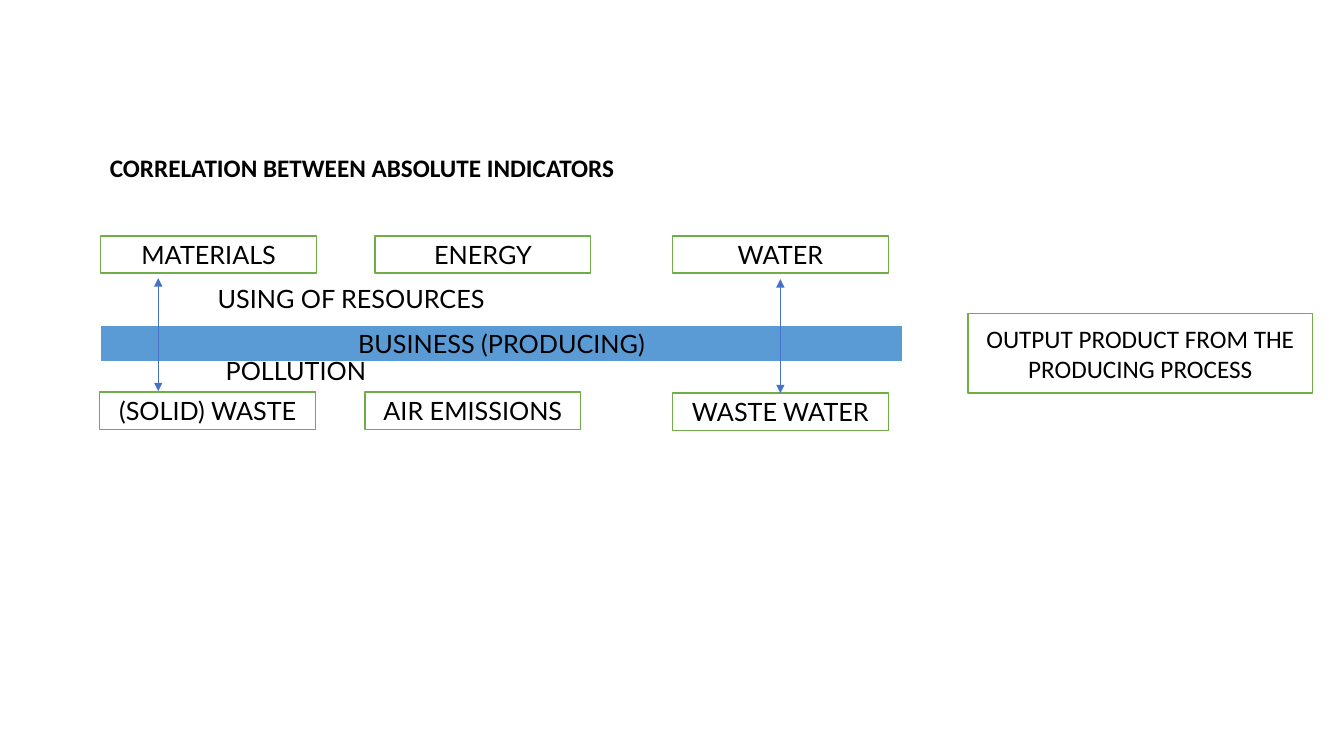
from dataclasses import dataclass

from lxml import etree
from pptx import Presentation
from pptx.dml.color import RGBColor
from pptx.enum.shapes import MSO_CONNECTOR, MSO_SHAPE
from pptx.enum.text import MSO_ANCHOR, MSO_AUTO_SIZE, PP_ALIGN
from pptx.oxml.ns import qn
from pptx.util import Pt

RECT = MSO_SHAPE.RECTANGLE
STRAIGHT = MSO_CONNECTOR.STRAIGHT
MIDDLE = MSO_ANCHOR.MIDDLE
CENTER, LEFT = PP_ALIGN.CENTER, PP_ALIGN.LEFT
GROW = MSO_AUTO_SIZE.SHAPE_TO_FIT_TEXT
TOP_SITE = 0
EMU_PER_PX = 9144  # 100 px to the inch


@dataclass(frozen=True)
class Theme:
    text: str = "000000"
    paper: str = "FFFFFF"
    box_line: str = "70AD47"
    bar: str = "5B9BD5"
    arrow: str = "4472C4"
    size: int = 18
    label_font: str = "Lato"
    plain_font: str = "Calibri"


THEME = Theme()
BOX_W, BOX_H = 214, 37
LABEL_W, LABEL_H = 667, 40

# label, left, top
INDICATORS = [
    ("MATERIALS", 100, 234),
    ("ENERGY", 372, 234),
    ("WATER", 667, 234),
    ("(SOLID) WASTE", 99, 389),
    ("AIR EMISSIONS", 362, 389),
    ("WASTE WATER", 667, 390),
]


def px(*values):
    return [v * EMU_PER_PX for v in values]


def rgb(value):
    return RGBColor.from_string(value)


def write(tf, text, font, align=LEFT, bold=False):
    tf.word_wrap = True
    tf.text = text
    p = tf.paragraphs[0]
    p.alignment = align
    f = p.runs[0].font
    f.name, f.size, f.bold = font, Pt(THEME.size), bold
    f.color.rgb = rgb(THEME.text)


def add_box(s, text, left, top, width=BOX_W, height=BOX_H, fill=THEME.paper,
            line=THEME.box_line, weight=1, font=THEME.label_font):
    sp = s.shapes.add_shape(RECT, *px(left, top, width, height))
    sp.shadow.inherit = False
    sp.fill.solid()
    sp.fill.fore_color.rgb = rgb(fill)
    sp.line.color.rgb = rgb(line)
    sp.line.width = Pt(weight)
    sp.text_frame.vertical_anchor = MIDDLE
    write(sp.text_frame, text, font, CENTER)
    return sp


def add_label(s, text, left, top, width=LABEL_W, font=THEME.label_font, bold=False):
    tf = s.shapes.add_textbox(*px(left, top, width, LABEL_H)).text_frame
    write(tf, text, font, bold=bold)
    tf.auto_size = GROW


def add_double_arrow(s, x, top, bottom):
    cxn = s.shapes.add_connector(STRAIGHT, *px(x, top, x, bottom))
    cxn.line.color.rgb = rgb(THEME.arrow)
    cxn.line.width = Pt(0.5)
    ln = cxn.line._get_or_add_ln()
    for end in ("a:headEnd", "a:tailEnd"):
        etree.SubElement(ln, qn(end), type="triangle")
    etree.SubElement(cxn._element.spPr, qn("a:effectLst"))
    return cxn


def main():
    prs = Presentation()
    prs.slide_width, prs.slide_height = px(1333, 750)
    s = prs.slides.add_slide(prs.slide_layouts[6])

    # Resources above, pollution below
    boxes = {text: add_box(s, text, left, top) for text, left, top in INDICATORS}

    # Business bar and its output
    add_box(s, "BUSINESS (PRODUCING)", 99, 322, 797, fill=THEME.bar,
            line=THEME.paper, weight=1.5)
    add_box(s, "OUTPUT PRODUCT FROM THE PRODUCING PROCESS", 960, 311, 342, 79,
            font=THEME.plain_font)

    # Heading and row labels
    add_label(s, "CORRELATION BETWEEN ABSOLUTE INDICATORS", 99, 146, 665,
              THEME.plain_font, bold=True)
    add_label(s, "USING OF RESOURCES", 206, 276)
    add_label(s, "POLLUTION", 214, 348)

    # Links from resources to pollution
    add_double_arrow(s, 157, 276, 388)
    water_link = add_double_arrow(s, 774, 277, 390)
    water_link.end_connect(boxes["WASTE WATER"], TOP_SITE)

    prs.save("out.pptx")


if __name__ == "__main__":
    main()
